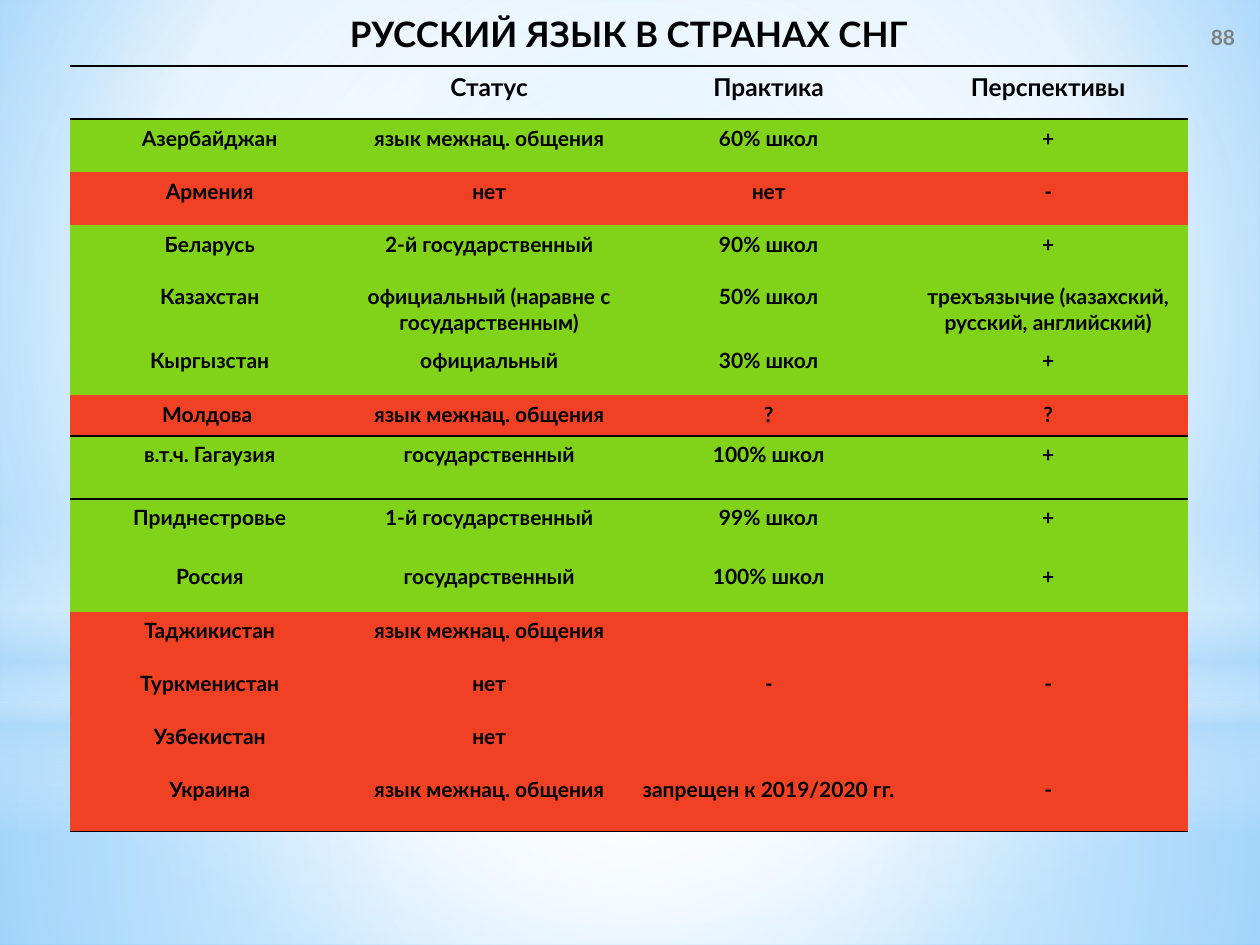
from dataclasses import dataclass

import pptx
import pptx.dml.color
import pptx.enum.shapes
import pptx.enum.text
import pptx.oxml
import pptx.oxml.ns
import pptx.util

PIXELS_PER_INCH = 126
FONT = "Lato"
BLACK, GREY, GREEN, RED = "000000", "808080", "81D31A", "F14124"
WHITE, SKY = "FFFFFF", "B4DCFA"
PLAIN_TABLE_STYLE = "{2D5ABB26-0587-4C30-8999-92F81FD0307C}"
CENTER = pptx.enum.text.PP_ALIGN.CENTER
MIDDLE = pptx.enum.text.MSO_ANCHOR.MIDDLE
SHAPES = pptx.enum.shapes.MSO_SHAPE


@dataclass(frozen=True)
class Box:
    left: int
    top: int
    width: int
    height: int

    def emu(self) -> tuple:
        return tuple(px(n) for n in (self.left, self.top, self.width, self.height))


@dataclass(frozen=True)
class Gradient:
    stops: tuple  # (position %, colour, opacity %)
    center: tuple = ()  # left, top, right, bottom in %; empty means top to bottom


@dataclass(frozen=True)
class Glow:
    preset: int
    box: Box
    gradient: Gradient


@dataclass(frozen=True)
class Row:
    height: int
    texts: tuple
    fill: str = ""
    size: int = 12
    line_above: bool = False
    line_below: bool = False


MID = (50, 50, 50, 50)
BACKGROUND = Gradient(((0, "9ED5FF", 100), (60, WHITE, 100), (100, "5BB9FF", 100)),
                      (20, 10, 20, 60))
GLOWS = (
    Glow(SHAPES.RECTANGLE, Box(0, 703, 1260, 242),
         Gradient(((0, WHITE, 91), (37, WHITE, 76), (100, SKY, 79)), MID)),
    Glow(SHAPES.RECTANGLE, Box(0, 0, 1260, 703),
         Gradient(((0, WHITE, 89), (48, WHITE, 62), (100, SKY, 79)), MID)),
    Glow(SHAPES.RECTANGLE, Box(0, 519, 1260, 315),
         Gradient(((0, WHITE, 0), (29, WHITE, 30), (45, SKY, 40),
                   (55, WHITE, 26), (65, SKY, 60), (100, WHITE, 0)))),
    Glow(SHAPES.OVAL, Box(0, 221, 1260, 703),
         Gradient(((0, WHITE, 100), (56, WHITE, 0)), MID)),
)
ROWS = (
    Row(53, ("", "Статус", "Практика", "Перспективы"), size=14,
        line_above=True, line_below=True),
    Row(53, ("Азербайджан", "язык межнац. общения", "60% школ", "+"), GREEN),
    Row(53, ("Армения", "нет", "нет", "-"), RED),
    Row(53, ("Беларусь", "2-й государственный", "90% школ", "+"), GREEN),
    Row(63, ("Казахстан", "официальный (наравне с государственным)", "50% школ",
             "трехъязычие (казахский, русский, английский)"), GREEN),
    Row(54, ("Кыргызстан", "официальный", "30% школ", "+"), GREEN),
    Row(41, ("Молдова ", "язык межнац. общения", "?", "?"), RED, line_below=True),
    Row(63, ("в.т.ч. Гагаузия", "государственный", "100% школ", "+"), GREEN,
        line_below=True),
    Row(59, ("Приднестровье", "1-й государственный", "99% школ", "+"), GREEN),
    Row(54, ("Россия", "государственный", "100% школ", "+"), GREEN),
    Row(53, ("Таджикистан", "язык межнац. общения", "", ""), RED),
    Row(53, ("Туркменистан", "нет", "-", "-"), RED),
    Row(53, ("Узбекистан", "нет", "", ""), RED),
    Row(61, ("Украина", "язык межнац. общения", "запрещен к 2019/2020 гг.", "-"), RED,
        line_below=True),
)


def px(length: int) -> int:
    return round(length * 914400 / PIXELS_PER_INCH)


def color(value: str) -> pptx.dml.color.RGBColor:
    return pptx.dml.color.RGBColor.from_string(value)


def write(text_frame, text: str, size: int, text_color: str = BLACK) -> None:
    paragraph = text_frame.paragraphs[0]
    paragraph.alignment = CENTER
    run = paragraph.add_run()
    run.text = text
    values = {"name": FONT, "size": pptx.util.Pt(size), "bold": True}
    for name, value in values.items():
        setattr(run.font, name, value)
    run.font.color.rgb = color(text_color)


def set_gradient(owner, gradient: Gradient) -> None:
    """Replace the default gradient inside the owner's element."""
    stops = "".join(
        f'<a:gs pos="{position * 1000}"><a:srgbClr val="{value}">'
        f'<a:alpha val="{opacity * 1000}"/></a:srgbClr></a:gs>'
        for position, value, opacity in gradient.stops)
    direction = '<a:lin ang="5400000" scaled="0"/>'
    if gradient.center:
        sides = " ".join(f'{side}="{percent * 1000}"'
                         for side, percent in zip("ltrb", gradient.center))
        direction = f'<a:path path="circle"><a:fillToRect {sides}/></a:path>'
    namespace = pptx.oxml.ns.nsdecls("a")
    fill = pptx.oxml.parse_xml(f'<a:gradFill {namespace} rotWithShape="1">'
                               f'<a:gsLst>{stops}</a:gsLst>{direction}</a:gradFill>')
    default = owner.element.find(".//" + pptx.oxml.ns.qn("a:gradFill"))
    default.getparent().replace(default, fill)


def add_glow(slide, glow: Glow) -> None:
    shape = slide.shapes.add_shape(glow.preset, *glow.box.emu())
    shape.shadow.inherit = False
    shape.line.fill.background()
    shape.fill.gradient()
    set_gradient(shape, glow.gradient)


def add_border(cell, side: str) -> None:
    border = pptx.oxml.parse_xml(
        f'<a:ln{side} {pptx.oxml.ns.nsdecls("a")} w="12700"><a:solidFill>'
        f'<a:srgbClr val="{BLACK}"/></a:solidFill></a:ln{side}>')
    cell._tc.get_or_add_tcPr().insert(0, border)


def fill_cell(cell, text: str, row: Row) -> None:
    write(cell.text_frame, text, row.size)
    if row.fill:
        cell.fill.solid()
        cell.fill.fore_color.rgb = color(row.fill)
    else:
        cell.fill.background()
    # The bottom border goes in first so that the top one precedes it
    if row.line_below:
        add_border(cell, "B")
    if row.line_above:
        add_border(cell, "T")


def add_language_table(slide, box: Box) -> None:
    column_count = len(ROWS[0].texts)
    frame = slide.shapes.add_table(len(ROWS), column_count, *box.emu())
    table = frame.table
    table.first_row = table.horz_banding = False
    frame.element.find(".//" + pptx.oxml.ns.qn("a:tableStyleId")).text = PLAIN_TABLE_STYLE
    for column in table.columns:
        column.width = px(box.width) // column_count
    for index, row in enumerate(ROWS):
        table.rows[index].height = px(row.height)
        for cell, text in zip(table.rows[index].cells, row.texts):
            fill_cell(cell, text, row)


def main() -> None:
    presentation = pptx.Presentation()
    presentation.slide_width, presentation.slide_height = px(1260), px(945)
    slide = presentation.slides.add_slide(presentation.slide_layouts[5])

    # Background and soft light
    slide.background.fill.gradient()
    set_gradient(slide, BACKGROUND)
    for glow in GLOWS:
        add_glow(slide, glow)

    # Title, brought in front of the light
    title = slide.shapes.title
    title.element.getparent().append(title.element)
    title.left, title.top, title.width, title.height = Box(3, 6, 1252, 55).emu()
    title.text_frame.vertical_anchor = MIDDLE
    write(title.text_frame, "РУССКИЙ ЯЗЫК В СТРАНАХ СНГ", 20)

    # Page number
    number = slide.shapes.add_textbox(*Box(1186, 0, 74, 74).emu())
    number.text_frame.word_wrap = True
    number.text_frame.vertical_anchor = MIDDLE
    write(number.text_frame, "88", 12, GREY)

    # Table of countries
    add_language_table(slide, Box(70, 66, 1118, sum(row.height for row in ROWS)))
    presentation.save("out.pptx")


if __name__ == "__main__":
    main()
